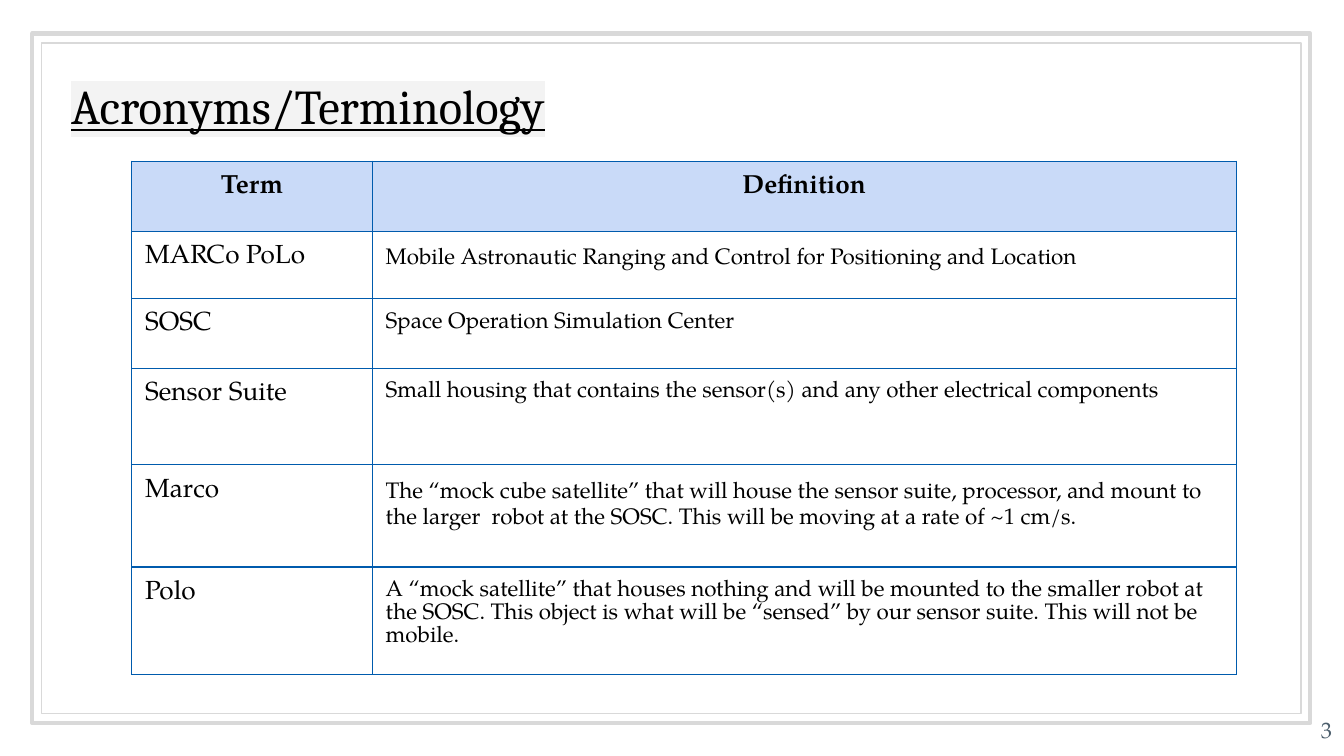
from lxml import etree
from pptx import Presentation
from pptx import util as u
from pptx.dml.color import RGBColor
from pptx.enum import shapes, text
from pptx.oxml import ns

SCALE = 9144
MARGIN = 10
BODY_FONT = "TeX Gyre Pagella"
BLACK = "000000"
FRAME_GRAY = "D9D9D9"
BORDER_BLUE = "005BAD"
HEADER_BLUE = "C9DAF8"

COLUMN_WIDTHS = [179, 643]
ROW_HEIGHTS = [52, 50, 52, 72, 76, 72]
HEADINGS = ["Term", "Definition"]
TERMS = [
    ("MARCo PoLo", "Mobile Astronautic Ranging and Control for Positioning and Location", 1.15, None),
    ("SOSC", "Space Operation Simulation Center", None, None),
    ("Sensor Suite", "Small housing that contains the sensor(s) and any other electrical components", None, 6),
    ("Marco", "The “mock cube satellite” that will house the sensor suite, processor, and mount to "
              "the larger  robot at the SOSC. This will be moving at a rate of ~1 cm/s.", 1.15, None),
    ("Polo", "A “mock satellite” that houses nothing and will be mounted to the smaller robot at "
             "the SOSC. This object is what will be “sensed” by our sensor suite. This will not be mobile.", None, None),
]


def px(length):
    return u.Emu(length * SCALE)


def color(value):
    return RGBColor.from_string(value)


def set_margins(target):
    target.margin_left = target.margin_right = px(MARGIN)
    target.margin_top = target.margin_bottom = px(MARGIN)


def write(text_frame, content, size, font=BODY_FONT, fill=BLACK, bold=False, align=None):
    text_frame.text = content
    paragraph = text_frame.paragraphs[0]
    paragraph.alignment = align
    run = paragraph.runs[0]
    run.font.size = u.Pt(size)
    run.font.name = font
    run.font.bold = bold
    run.font.color.rgb = color(fill)
    return paragraph


def highlight(run, value):
    element = etree.Element(ns.qn("a:highlight"))
    etree.SubElement(element, ns.qn("a:srgbClr"), val=value)
    run.font._element.find(ns.qn("a:solidFill")).addnext(element)


def add_frame(slide, left, top, width, height, weight):
    frame = slide.shapes.add_shape(
        shapes.MSO_SHAPE.RECTANGLE, px(left), px(top), px(width), px(height))
    frame.shadow.inherit = False
    frame.fill.background()
    frame.line.color.rgb = color(FRAME_GRAY)
    frame.line.width = u.Pt(weight)


def add_text(slide, left, top, width, height, content, size, anchor, **style):
    box = slide.shapes.add_textbox(px(left), px(top), px(width), px(height))
    text_frame = box.text_frame
    text_frame.word_wrap = True
    text_frame.vertical_anchor = anchor
    set_margins(text_frame)
    return write(text_frame, content, size, **style)


def set_borders(cell):
    properties = cell._tc.get_or_add_tcPr()
    for position, side in enumerate(("a:lnL", "a:lnR", "a:lnT", "a:lnB")):
        line = etree.Element(ns.qn(side), w=str(u.Pt(0.75)))
        fill = etree.SubElement(line, ns.qn("a:solidFill"))
        etree.SubElement(fill, ns.qn("a:srgbClr"), val=BORDER_BLUE)
        properties.insert(position, line)


def fill_cell(cell, content, size, background=None, **style):
    set_margins(cell)
    if background:
        cell.fill.solid()
        cell.fill.fore_color.rgb = color(background)
    else:
        cell.fill.background()
    set_borders(cell)
    return write(cell.text_frame, content, size, **style)


def add_terms_table(slide, left, top):
    table = slide.shapes.add_table(
        len(ROW_HEIGHTS), len(COLUMN_WIDTHS), px(left), px(top),
        px(sum(COLUMN_WIDTHS)), px(sum(ROW_HEIGHTS))).table
    table.horz_banding = False
    for column, width in zip(table.columns, COLUMN_WIDTHS):
        column.width = px(width)
    for row, height in zip(table.rows, ROW_HEIGHTS):
        row.height = px(height)
    for index, heading in enumerate(HEADINGS):
        fill_cell(table.cell(0, index), heading, 14, HEADER_BLUE,
                  bold=True, align=text.PP_ALIGN.CENTER)
    for index, (term, definition, spacing, before) in enumerate(TERMS, start=1):
        fill_cell(table.cell(index, 0), term, 14)
        paragraph = fill_cell(table.cell(index, 1), definition, 12)
        paragraph.line_spacing = spacing
        paragraph.space_before = u.Pt(before) if before else None


def main():
    presentation = Presentation()
    presentation.slide_width = px(1000)
    presentation.slide_height = u.Emu(presentation.slide_width * 9 // 16)
    slide = presentation.slides.add_slide(presentation.slide_layouts[6])

    add_frame(slide, 24, 25, 951, 513, 2.25)
    add_frame(slide, 31, 32, 937, 499, 0.75)

    title = add_text(slide, 43, 37, 915, 83, "Acronyms/Terminology", 26,
                     text.MSO_ANCHOR.MIDDLE, font="Cambria")
    title.runs[0].font.underline = True
    highlight(title.runs[0], "F3F3F3")

    add_text(slide, 957, 520, 60, 43, "3", 12, text.MSO_ANCHOR.BOTTOM,
             fill="4D5F6D", align=text.PP_ALIGN.CENTER)
    add_terms_table(slide, 98, 120)

    presentation.save("out.pptx")


if __name__ == "__main__":
    main()
